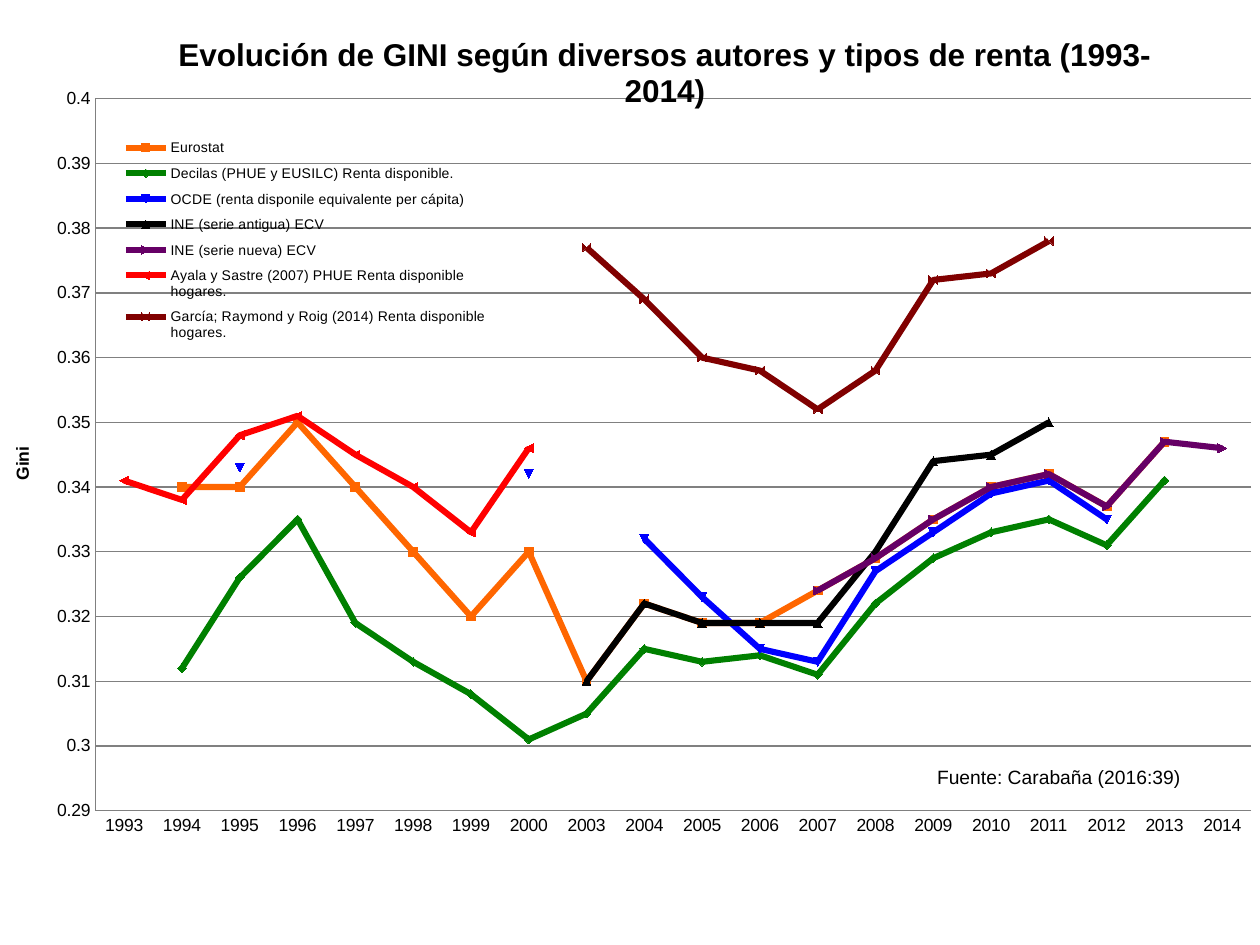
from pptx import Presentation
from pptx.chart.data import CategoryChartData
from pptx.dml.color import RGBColor
from pptx.enum.chart import XL_CHART_TYPE, XL_LEGEND_POSITION, XL_TICK_MARK
from pptx.oxml import parse_xml
from pptx.oxml.ns import nsdecls, qn
from pptx.util import Cm, Pt

LINE = XL_CHART_TYPE.LINE_MARKERS
RIGHT = XL_LEGEND_POSITION.RIGHT
NO_TICK = XL_TICK_MARK.NONE

BLACK = RGBColor(0x00, 0x00, 0x00)
GREY = RGBColor(0x80, 0x80, 0x80)
ORANGE = RGBColor(0xFF, 0x66, 0x00)
GREEN = RGBColor(0x00, 0x80, 0x00)
BLUE = RGBColor(0x00, 0x00, 0xFF)
PURPLE = RGBColor(0x66, 0x00, 0x66)
RED = RGBColor(0xFF, 0x00, 0x00)
MAROON = RGBColor(0x80, 0x00, 0x00)
FONT = "Arial"

# Content: each series is a name, a colour and runs of values by first year
TITLE = "Evolución de GINI según diversos autores y tipos de renta (1993-2014)"
SOURCE = "Fuente: Carabaña (2016:39)"
YEARS = [*range(1993, 2001), *range(2003, 2015)]
SERIES = [
    ("Eurostat", ORANGE, {
        1994: [0.34, 0.34, 0.35, 0.34, 0.33, 0.32, 0.33, 0.31, 0.322, 0.319,
               0.319, 0.324, 0.329, 0.335, 0.34, 0.342, 0.337, 0.347]}),
    ("Decilas (PHUE y EUSILC) Renta disponible.", GREEN, {
        1994: [0.312, 0.326, 0.335, 0.319, 0.313, 0.308, 0.301, 0.305, 0.315,
               0.313, 0.314, 0.311, 0.322, 0.329, 0.333, 0.335, 0.331, 0.341]}),
    ("OCDE (renta disponile equivalente per cápita)", BLUE, {
        1995: [0.343],
        2000: [0.342],
        2004: [0.332, 0.323, 0.315, 0.313, 0.327, 0.333, 0.339, 0.341, 0.335]}),
    ("INE (serie antigua) ECV", BLACK, {
        2003: [0.31, 0.322, 0.319, 0.319, 0.319, 0.33, 0.344, 0.345, 0.35]}),
    ("INE (serie nueva) ECV", PURPLE, {
        2007: [0.324, 0.329, 0.335, 0.34, 0.342, 0.337, 0.347, 0.346]}),
    ("Ayala y Sastre (2007) PHUE Renta disponible hogares.", RED, {
        1993: [0.341, 0.338, 0.348, 0.351, 0.345, 0.34, 0.333, 0.346]}),
    ("García; Raymond y Roig (2014) Renta disponible hogares.", MAROON, {
        2003: [0.377, 0.369, 0.36, 0.358, 0.352, 0.358, 0.372, 0.373, 0.378]}),
]


def spread(parts):
    """Place the runs of values on the list of years, with gaps as None."""
    row = [None] * len(YEARS)
    for year, vals in parts.items():
        start = YEARS.index(year)
        row[start:start + len(vals)] = vals
    return row


def style(font, size, bold=False):
    font.name, font.size, font.bold = FONT, Pt(size), bold
    font.color.rgb = BLACK


def place(node, index, x, y, w=None, h=None, inner=False):
    """Give a chart part a manual layout, in fractions of the chart."""
    for old in node.findall(qn("c:layout")):
        node.remove(old)
    tags = [("xMode", "edge"), ("yMode", "edge"), ("x", x), ("y", y)]
    if inner:
        tags.insert(0, ("layoutTarget", "inner"))
    if w:
        tags += [("w", w), ("h", h)]
    body = "".join(f'<c:{tag} val="{val}"/>' for tag, val in tags)
    node.insert(index, parse_xml(
        f'<c:layout {nsdecls("c")}><c:manualLayout>{body}'
        '</c:manualLayout></c:layout>'))


def label(title, text, size):
    title.text_frame.text = text
    style(title.text_frame.paragraphs[0].runs[0].font, size, True)


deck = Presentation()
deck.slide_width, deck.slide_height = Cm(25.4), Cm(19.05)
slide = deck.slides.add_slide(deck.slide_layouts[6])

# Chart
data = CategoryChartData()
data.categories = [str(year) for year in YEARS]
for name, _, parts in SERIES:
    data.add_series(name, spread(parts))
chart = slide.shapes.add_chart(
    LINE, Cm(-0.1), Cm(0.23), Cm(25.58), Cm(17.09), data).chart
style(chart.font, 10)
place(chart.plots[0]._element.getparent(), 0, 0.079, 0.103, 0.911, 0.84, True)

# Lines
for line, (_, color, _) in zip(chart.plots[0].series, SERIES):
    line.smooth = False
    line.format.line.color.rgb = color
    line.format.line.width = Pt(3.5)
    line.marker.size = 5
    line.marker.format.fill.solid()
    line.marker.format.fill.fore_color.rgb = color
    line.marker.format.line.color.rgb = color

# Axes
years, gini = chart.category_axis, chart.value_axis
for axis in (years, gini):
    axis.major_tick_mark = axis.minor_tick_mark = NO_TICK
    axis.format.line.color.rgb = GREY
    style(axis.tick_labels.font, 10)
gini.minimum_scale, gini.maximum_scale, gini.major_unit = 0.29, 0.4, 0.01
gini.tick_labels.number_format = "General"
gini.tick_labels.number_format_is_linked = False
gini.has_major_gridlines = True
gini.major_gridlines.format.line.color.rgb = GREY
label(gini.axis_title, "Gini", 10)
place(gini.axis_title._element, 1, 0.01, 0.51)

# Title and legend
label(chart.chart_title, TITLE, 18)
place(chart.chart_title._element, 1, 0.14, 0.02)
chart.has_legend = True
chart.legend.position = RIGHT
chart.legend.include_in_layout = False
style(chart.legend.font, 8)
place(chart.legend._element, 1, 0.1, 0.14, 0.29, 0.26)

# Source note
note = slide.shapes.add_textbox(Cm(18.64), Cm(15.42), Cm(5.97), Cm(0.58))
frame = note.text_frame
frame.word_wrap = True
frame.margin_top = frame.margin_bottom = 0
frame.text = SOURCE
style(frame.paragraphs[0].runs[0].font, 11)

deck.save("out.pptx")
